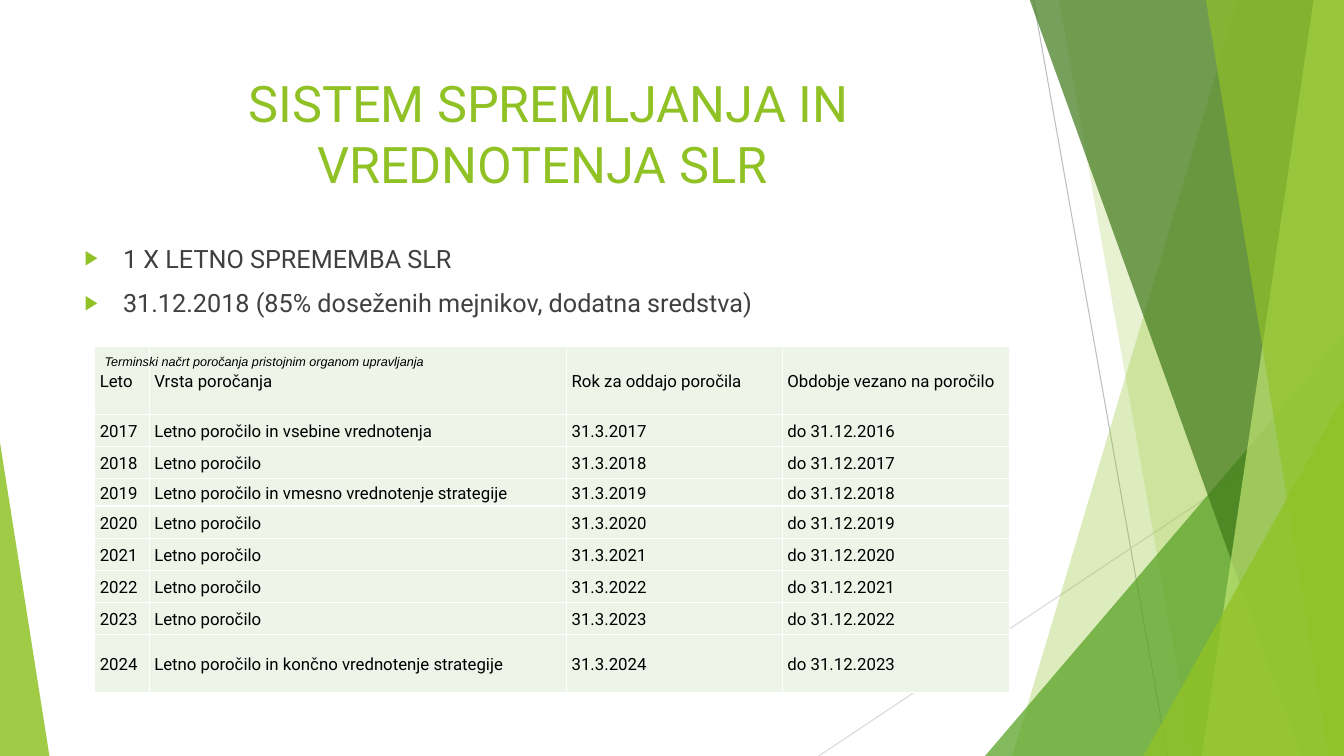
from dataclasses import dataclass

from lxml import etree
from pptx import Presentation
from pptx.dml.color import RGBColor
from pptx.enum import shapes, text
from pptx.oxml.ns import qn
from pptx import util as u

PX = 9144  # EMU per px, 100 px to the inch


@dataclass(frozen=True)
class Theme:
    lime: str = "90C226"
    green: str = "54A021"
    forest: str = "3F7819"
    pale_lime: str = "C0E474"
    body_text: str = "404040"
    black: str = "000000"
    cell: str = "EEF4E8"
    border: str = "FFFFFF"
    font: str = "Roboto"
    caption_font: str = "Arial"
    title_size: int = 36
    body_size: int = 18
    table_size: int = 12
    caption_size: int = 9


theme = Theme()


def paint(shape, color, opacity):
    """Give a decoration a translucent fill with no outline or shadow."""
    shape.shadow.inherit = False
    shape.line.fill.background()
    shape.fill.solid()
    shape.fill.fore_color.rgb = RGBColor.from_string(color)
    rgb = shape.fill._xPr.find(".//" + qn("a:srgbClr"))
    etree.SubElement(rgb, qn("a:alpha"), val=str(opacity * 1000))


def style(paragraph, size, color, name=theme.font):
    paragraph.font.size = u.Pt(size)
    paragraph.font.name = name
    paragraph.font.color.rgb = RGBColor.from_string(color)


presentation = Presentation()
presentation.slide_width = 1333 * PX
presentation.slide_height = 750 * PX
slide = presentation.slides.add_slide(presentation.slide_layouts[1])
title, body = slide.placeholders

# Background decoration
for x1, y1, x2, y2, color in [
    (1025, 0, 1158, 750, "BFBFBF"),
    (1333, 403, 812, 750, "D9D9D9"),
]:
    line = slide.shapes.add_connector(
        shapes.MSO_CONNECTOR.STRAIGHT, x1 * PX, y1 * PX, x2 * PX, y2 * PX)
    line.line.color.rgb = RGBColor.from_string(color)
    line.line.width = u.Pt(0.75)
    etree.SubElement(line.element.spPr, qn("a:effectLst"))

# Bands touch the right edge: (top x, bottom x); triangles: (left, top, width, height, apex)
for outline, color, opacity in [
    ((1228, 1004), theme.lime, 30),
    ((1050, 1183), theme.lime, 20),
    ((977, 333, 356, 417, 1), theme.green, 72),
    ((1021, 1291), theme.forest, 70),
    ((1303, 1192), theme.pale_lime, 70),
    ((1196, 1318), theme.lime, 65),
    ((1134, 393, 199, 357, 1), theme.lime, 80),
    ((0, 439, 49, 311, 0), theme.lime, 85),
]:
    if len(outline) == 2:
        top_x, bottom_x = outline
        builder = slide.shapes.build_freeform(top_x, -1, scale=PX)
        builder.add_line_segments([(1333, -1), (1333, 750), (bottom_x, 750)])
        decoration = builder.convert_to_shape()
    else:
        *box, apex = outline
        decoration = slide.shapes.add_shape(
            shapes.MSO_SHAPE.ISOSCELES_TRIANGLE, *[side * PX for side in box])
        decoration.adjustments[0] = apex
    paint(decoration, color, opacity)

# Title and list, brought in front of the decoration
for placeholder, top, height in [(title, 67, 144), (body, 236, 424)]:
    slide.shapes.element.append(placeholder.element)
    placeholder.left, placeholder.top = 74 * PX, top * PX
    placeholder.width, placeholder.height = 940 * PX, height * PX
    placeholder.text_frame.vertical_anchor = text.MSO_ANCHOR.TOP
    placeholder.text_frame.auto_size = text.MSO_AUTO_SIZE.NONE

title.text_frame.text = "SISTEM SPREMLJANJA IN VREDNOTENJA SLR "
title.text_frame.paragraphs[0].alignment = text.PP_ALIGN.CENTER
style(title.text_frame.paragraphs[0], theme.title_size, theme.lime)

body.text_frame.text = (
    "1 X LETNO SPREMEMBA SLR\n"
    "31.12.2018 (85% doseženih mejnikov, dodatna sredstva)"
)
for paragraph in body.text_frame.paragraphs:
    paragraph.space_before = u.Pt(10)
    properties = paragraph._p.get_or_add_pPr()
    properties.set("marL", str(38 * PX))
    properties.set("indent", str(-38 * PX))
    bullet_color = etree.SubElement(properties, qn("a:buClr"))
    etree.SubElement(bullet_color, qn("a:srgbClr"), val=theme.lime)
    etree.SubElement(properties, qn("a:buSzPct"), val="80000")
    etree.SubElement(properties, qn("a:buChar"), char="▶")
    style(paragraph, theme.body_size, theme.body_text)

# Reporting schedule
special_reports = {
    2017: "Letno poročilo in vsebine vrednotenja",
    2019: "Letno poročilo in vmesno vrednotenje strategije",
    2024: "Letno poročilo in končno vrednotenje strategije",
}
rows = [("Leto", "Vrsta poročanja", "Rok za oddajo poročila", "Obdobje vezano na poročilo")]
for year in range(2017, 2025):
    report = special_reports.get(year, "Letno poročilo")
    rows.append((str(year), report, f"31.3.{year}", f"do 31.12.{year - 1}"))
column_widths = [54, 414, 214, 225]
row_heights = [67, 32, 32, 27, 32, 32, 32, 32, 57]

table = slide.shapes.add_table(
    len(rows), len(column_widths), 94 * PX, 344 * PX,
    sum(column_widths) * PX, sum(row_heights) * PX).table
table.first_row = table.horz_banding = False
for column, width in zip(table.columns, column_widths):
    column.width = width * PX
for row, height, values in zip(table.rows, row_heights, rows):
    row.height = height * PX
    for cell, value in zip(row.cells, values):
        cell.text = value
        cell.vertical_anchor = text.MSO_ANCHOR.MIDDLE
        cell.margin_left = cell.margin_right = 5 * PX
        cell.margin_top = cell.margin_bottom = 0
        for side in ("lnL", "lnR", "lnT", "lnB"):
            border = etree.SubElement(
                cell._tc.get_or_add_tcPr(), qn(f"a:{side}"), w=str(u.Pt(1)))
            border_fill = etree.SubElement(border, qn("a:solidFill"))
            etree.SubElement(border_fill, qn("a:srgbClr"), val=theme.border)
        cell.fill.solid()
        cell.fill.fore_color.rgb = RGBColor.from_string(theme.cell)
        paragraph = cell.text_frame.paragraphs[0]
        paragraph.line_spacing = 1.15
        style(paragraph, theme.table_size, theme.black)

caption = slide.shapes.add_textbox(94 * PX, 344 * PX, 907 * PX, 56 * PX).text_frame
caption.word_wrap = True
caption.margin_top = 7 * PX
caption.text = "Terminski načrt poročanja pristojnim organom upravljanja"
style(caption.paragraphs[0], theme.caption_size, theme.black, theme.caption_font)
caption.paragraphs[0].font.italic = True

presentation.save("out.pptx")
